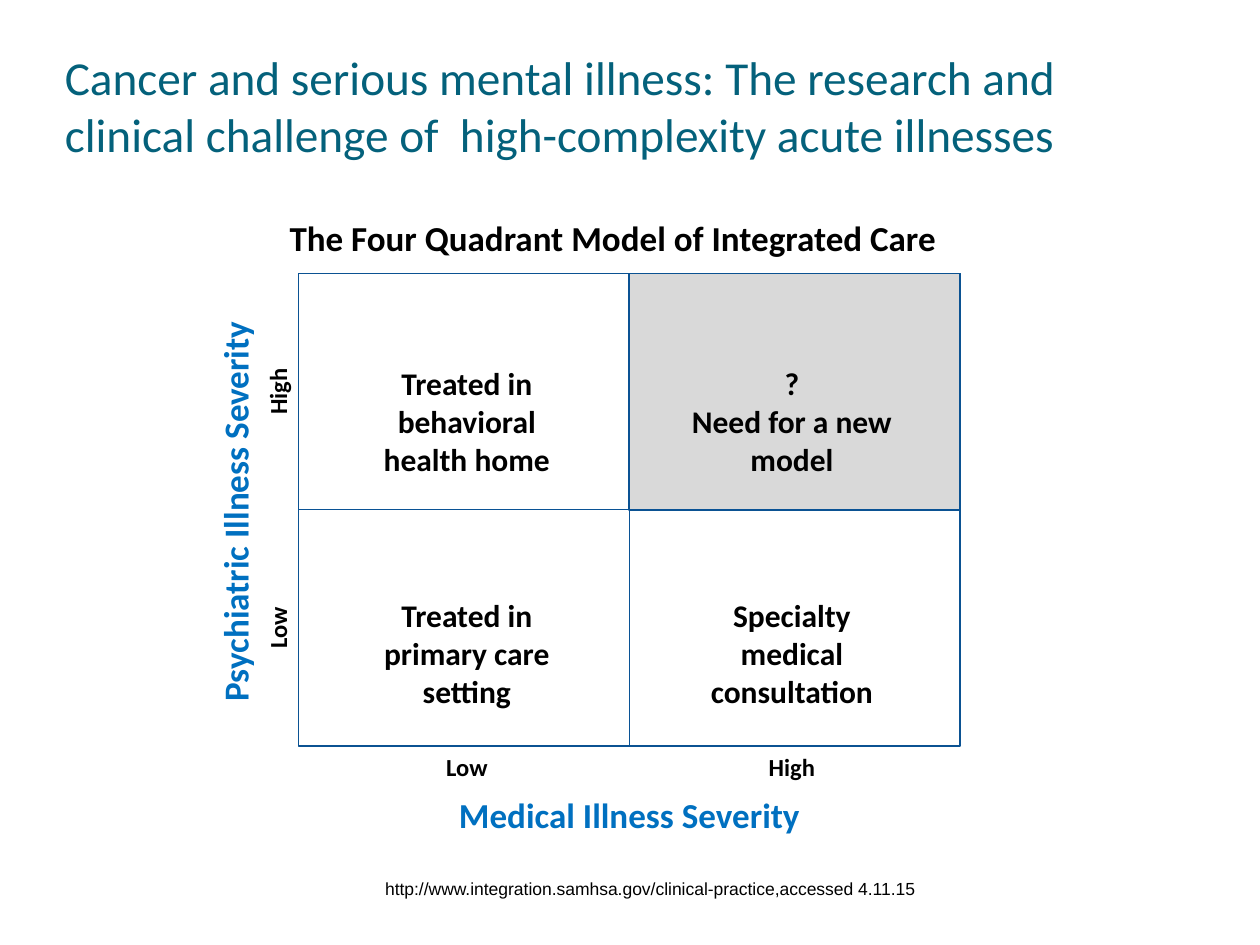
"""Build the slide on the four quadrant model of integrated care."""
import pptx
import pptx.dml.color
import pptx.enum.shapes
import pptx.enum.text
import pptx.oxml.ns
import pptx.util
from lxml import etree

Pt = pptx.util.Pt
RGB = pptx.dml.color.RGBColor.from_string
ALIGN = pptx.enum.text.PP_ALIGN
THEME = {
    "title": "04617B", "axis": "0070C0", "text": "000000",
    "frame": "0B5292", "divider": "095295", "highlight": "D9D9D9",
    "title_size": 27, "heading_size": 20, "cell_size": 18, "tick_size": 14, "source_size": 10,
    "font": "Calibri", "source_font": "Arial",
}

prs = pptx.Presentation()
prs.slide_width, prs.slide_height = Pt(720), Pt(540)
s = prs.slides.add_slide(prs.slide_layouts[6])


def add_text(lines, x, y, w, h, size, color="text", font="font", bold=True, align=ALIGN.CENTER, rotation=0):
    sp = s.shapes.add_textbox(Pt(x), Pt(y), Pt(w), Pt(h))
    sp.rotation = rotation
    tf = sp.text_frame
    tf.word_wrap = True
    tf.text = lines
    for p in tf.paragraphs:
        p.alignment = align
        p.font.name, p.font.size, p.font.bold = THEME[font], Pt(THEME[size]), bold
        p.font.color.rgb = RGB(THEME[color])


def add_box(x, y, w, h, fill=None):
    sp = s.shapes.add_shape(pptx.enum.shapes.MSO_SHAPE.RECTANGLE, Pt(x), Pt(y), Pt(w), Pt(h))
    sp.shadow.inherit = False
    if fill:
        sp.fill.solid()
        sp.fill.fore_color.rgb = RGB(THEME[fill])
    else:
        sp.fill.background()
    sp.line.color.rgb = RGB(THEME["frame"])
    sp.line.width = Pt(1)


left, top, width, height = 170.64, 156.24, 378, 270
right, bottom = left + width, top + height
mid_x, mid_y = left + width / 2, top + height / 2
label_w, tick_h, axis_w, axis_h = 132, 24.5, 270, 31.5
column_centers = (266.75, 452.5)
row_centers = (top + height / 4, top + height * 3 / 4)
cell_tops = (204.5, 337)

add_box(mid_x, top, width / 2, height / 2, "highlight")
add_text("The Four Quadrant Model of Integrated Care", 158.4, 120.25, 399, axis_h,
         "heading_size", align=ALIGN.LEFT)
add_box(left, top, width, height)

for x1, y1, x2, y2 in ((mid_x, top, mid_x, bottom), (left, mid_y, right, mid_y)):
    line = s.shapes.add_connector(pptx.enum.shapes.MSO_CONNECTOR.STRAIGHT, Pt(x1), Pt(y1), Pt(x2), Pt(y2))
    line.line.color.rgb = RGB(THEME["divider"])
    line.line.width = Pt(0.75)
    etree.SubElement(line._element.spPr, pptx.oxml.ns.qn("a:effectLst"))

add_text("Psychiatric Illness Severity", 134.25 - axis_w / 2, 292.3 - axis_h / 2, axis_w, axis_h,
         "heading_size", "axis", rotation=270)
add_text("Medical Illness Severity", mid_x - axis_w / 2, 450, axis_w, axis_h, "heading_size", "axis")

for label, center in zip(("High", "Low"), row_centers):
    add_text(label, 158.75 - label_w / 2, center - tick_h / 2, label_w, tick_h, "tick_size", rotation=270)
for label, center in zip(("Low", "High"), column_centers):
    add_text(label, center - label_w / 2, bottom, label_w, tick_h, "tick_size")

quadrants = (
    ("Treated in behavioral health home", "?\nNeed for a new model"),
    ("Treated in primary care setting", "Specialty medical consultation"),
)
for row, y in zip(quadrants, cell_tops):
    for label, center in zip(row, column_centers):
        add_text(label, center - label_w / 2, y, label_w, 72.75, "cell_size")

add_text("http://www.integration.samhsa.gov/clinical-practice,accessed 4.11.15", 213, 498.25, 330, 19.5,
         "source_size", font="source_font", bold=False, align=ALIGN.LEFT)
add_text("Cancer and serious mental illness: The research and clinical challenge of  "
         "high-complexity acute illnesses", 30, 24, 648, 90,
         "title_size", "title", bold=False, align=ALIGN.LEFT)

prs.save("out.pptx")
